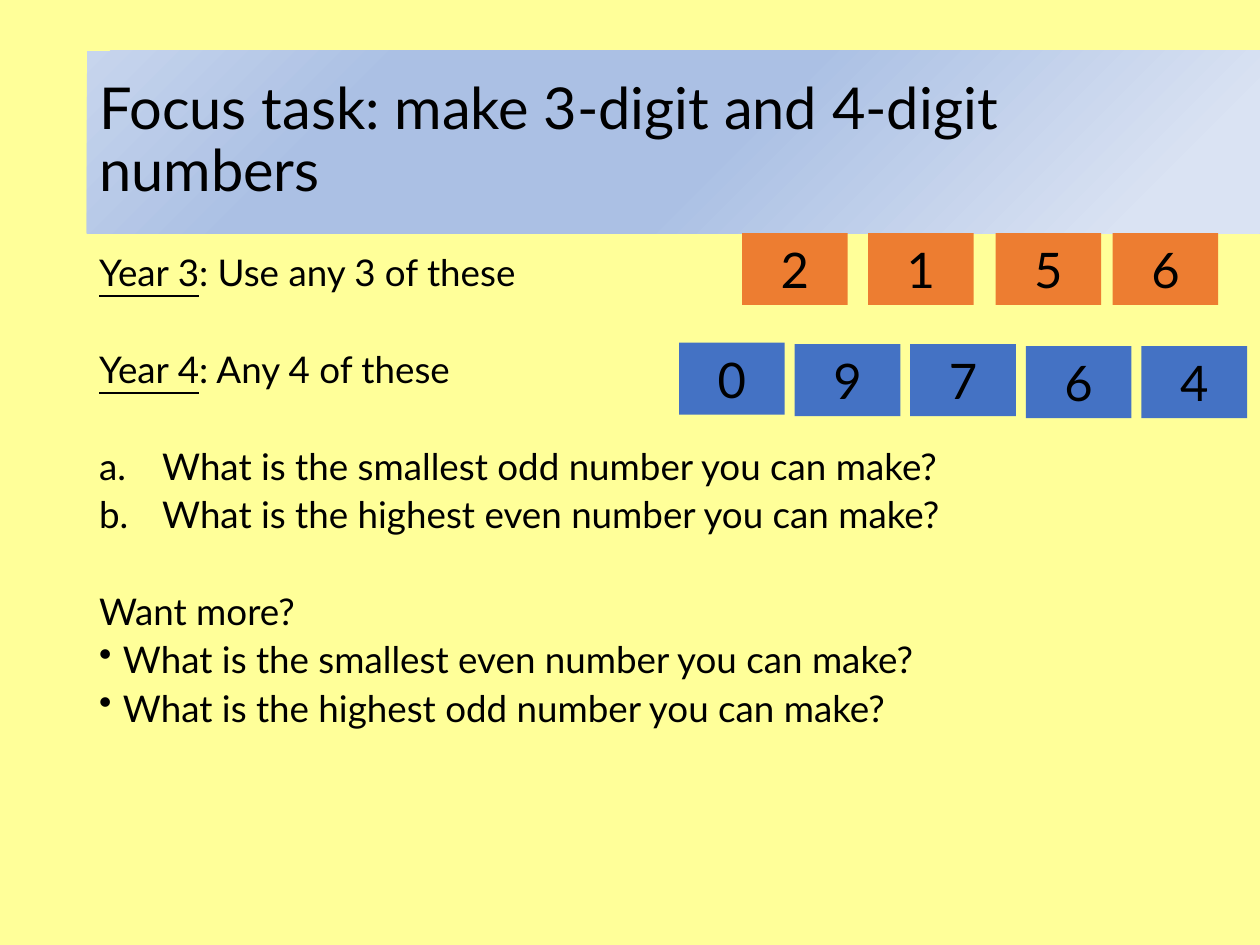
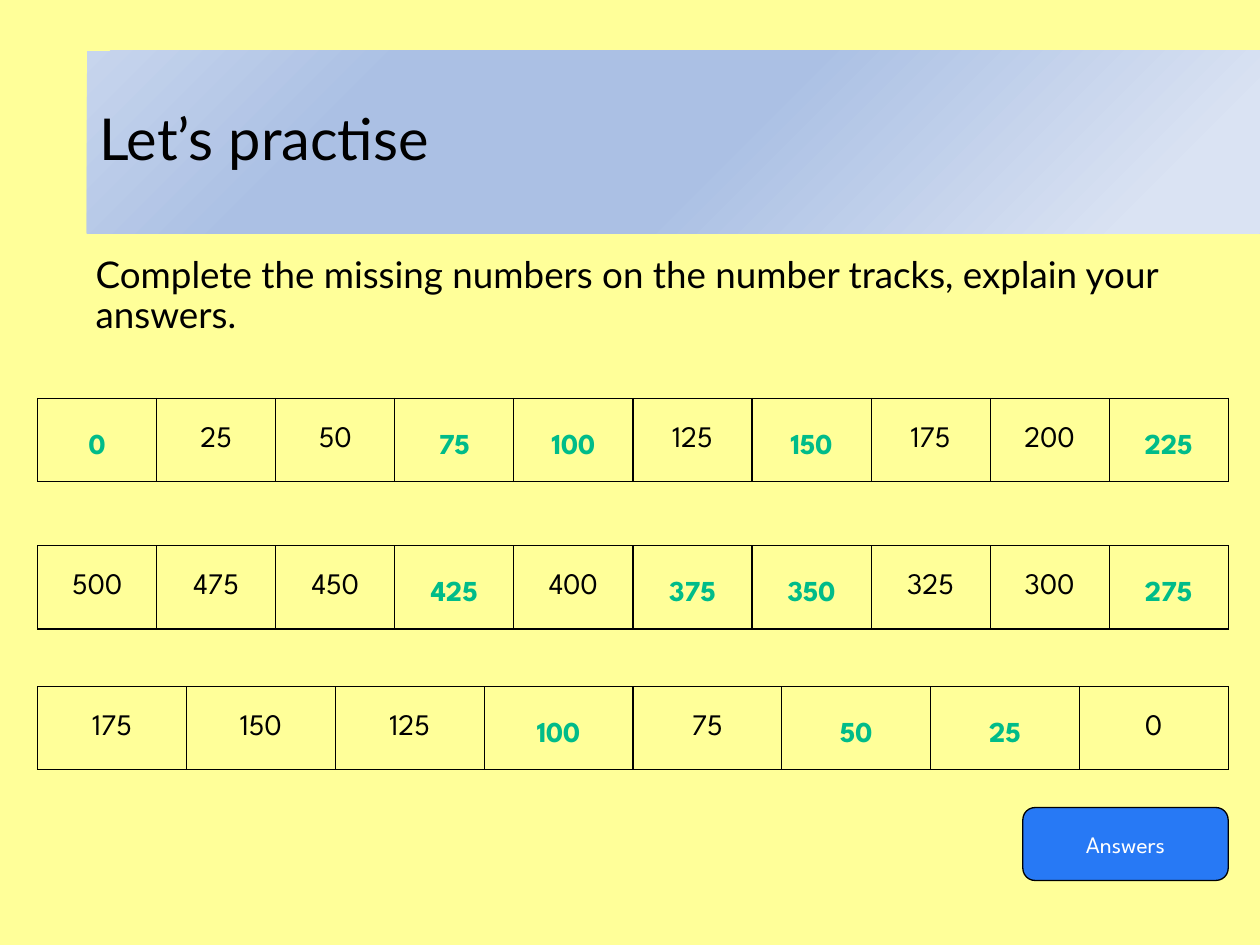
"""Build two maths lesson slides: digit tiles and number tracks."""
from dataclasses import dataclass
from typing import Any, NamedTuple

import lxml.etree
import pptx
import pptx.dml.color
import pptx.enum.shapes
import pptx.enum.text
import pptx.oxml
import pptx.oxml.ns
import pptx.util

Cm = pptx.util.Cm
Pt = pptx.util.Pt
RGBColor = pptx.dml.color.RGBColor
PRESET = pptx.enum.shapes.MSO_SHAPE
ALIGN = pptx.enum.text.PP_ALIGN
ANCHOR = pptx.enum.text.MSO_ANCHOR
AUTO_SIZE = pptx.enum.text.MSO_AUTO_SIZE

PAPER = RGBColor(0xFF, 0xFF, 0x99)
BLACK = RGBColor(0x00, 0x00, 0x00)
WHITE = RGBColor(0xFF, 0xFF, 0xFF)
ORANGE = RGBColor(0xED, 0x7D, 0x31)
BLUE = RGBColor(0x44, 0x72, 0xC4)
BUTTON_BLUE = RGBColor(0x27, 0x79, 0xF5)
ANSWER_GREEN = RGBColor(0x00, 0xBC, 0x89)
BAND_PALE = RGBColor(0xDA, 0xE3, 0xF3)
BAND_MID = RGBColor(0xAB, 0xC0, 0xE4)
BAND_LIGHT = RGBColor(0xC7, 0xD5, 0xED)
BAND_STOPS = ((10, BAND_PALE), (46, BAND_MID), (76, BAND_MID), (100, BAND_LIGHT))

LATO = "Lato"
SPARTAN = "League Spartan"
TITLE_FONT = {"name": LATO, "size": Pt(33)}
BODY_FONT = {"name": LATO, "size": Pt(21)}
TILE_FONT = {"name": LATO, "size": Pt(28)}
TRACK_FONT = {"name": SPARTAN, "size": Pt(17)}
ANSWER_FONT = {"name": SPARTAN, "size": Pt(16.5), "bold": True}
BUTTON_FONT = {"name": SPARTAN, "size": Pt(13.5)}
TRACK_MARGINS = {f"margin_{side}": Cm(0.18) for side in ("left", "right", "top", "bottom")}

LEFT, BAND_TOP, BAND_HEIGHT, TEXT_WIDTH = 1.75, 1.02, 3.68, 21.9
SLIDE_WIDTH, SLIDE_HEIGHT = 25.4, 19.05
BODY_TOP = 5.08
TRACK_LEFT, TRACK_WIDTH, TRACK_HEIGHT = 0.76, 24.0, 1.68
LINE_GAP, SECTION_GAP = 7.5, 35.2


class Box(NamedTuple):
    """A place on the slide in centimetres."""
    left: float
    top: float
    width: float
    height: float

    def lengths(self) -> list:
        """Give the four lengths for python-pptx."""
        return [Cm(value) for value in self]


class Marker(NamedTuple):
    """A bullet or a letter with its hanging indent."""
    tag: str
    attribute: str
    value: str
    indent: float


LETTER = Marker("a:buAutoNum", "type", "alphaLcPeriod", 1.27)
DOT = Marker("a:buChar", "char", "•", 0.48)


@dataclass
class TaskLine:
    """A line of the task text, with an underlined start."""
    text: str
    underlined: str = ""
    before: float = LINE_GAP
    marker: Marker | None = None


@dataclass
class Tile:
    """A coloured digit card."""
    digit: str
    left: float
    top: float
    colour: RGBColor


@dataclass
class NumberTrack:
    """A row of numbers, some of which are answers."""
    top: float
    numbers: tuple
    answers: set


TASK_LINES = [
    TaskLine(": Use any 3 of these", "Year 3"),
    TaskLine(": Any 4 of these", "Year 4", SECTION_GAP),
    TaskLine("What is the smallest odd number you can make?", "", SECTION_GAP, LETTER),
    TaskLine("What is the highest even number you can make?", marker=LETTER),
    TaskLine("Want more?", before=SECTION_GAP),
    TaskLine("What is the smallest even number you can make?", marker=DOT),
    TaskLine("What is the highest odd number you can make?", marker=DOT),
]
YEAR_3_TILES = [Tile(digit, left, 4.7, ORANGE)
                for digit, left in zip("2156", (14.96, 17.5, 20.07, 22.43))]
YEAR_4_TILES = [Tile(digit, 13.69 + 2.33 * place, top, BLUE)
                for place, (digit, top) in enumerate(zip("09764", (6.91, 6.94, 6.94, 6.98, 6.98)))]
TRACKS = [
    NumberTrack(8.03, tuple(range(0, 250, 25)), {0, 75, 100, 150, 225}),
    NumberTrack(11.0, tuple(range(500, 250, -25)), {425, 375, 350, 275}),
    NumberTrack(13.84, tuple(range(175, -25, -25)), {100, 50, 25}),
]


def apply(target: Any, formats: dict) -> None:
    """Set every format value on the target."""
    for name, value in formats.items():
        setattr(target, name, value)


def add_run(paragraph: Any, text: str, font: dict, colour: RGBColor = BLACK) -> Any:
    """Add formatted text to a paragraph."""
    run = paragraph.add_run()
    run.text = text
    apply(run.font, font)
    run.font.color.rgb = colour
    return run


def add_card(slide: Any, preset: Any, box: Box, fill: RGBColor) -> Any:
    """Add a flat shape without a line."""
    card = slide.shapes.add_shape(preset, *box.lengths())
    card.shadow.inherit = False
    card.fill.solid()
    card.fill.fore_color.rgb = fill
    card.line.fill.background()
    return card


def add_label(card: Any, text: str, font: dict, colour: RGBColor) -> None:
    """Centre a label on a shape."""
    card.text_frame.vertical_anchor = ANCHOR.MIDDLE
    paragraph = card.text_frame.paragraphs[0]
    paragraph.alignment = ALIGN.CENTER
    add_run(paragraph, text, font, colour)


def add_text_frame(slide: Any, box: Box, formats: dict) -> Any:
    """Add a wrapping text box and return its frame."""
    frame = slide.shapes.add_textbox(*box.lengths()).text_frame
    apply(frame, {"word_wrap": True, **formats})
    return frame


def add_band(slide: Any) -> None:
    """Draw the gradient title band behind everything else."""
    band = add_card(slide, PRESET.RECTANGLE,
                    Box(LEFT, BAND_TOP, SLIDE_WIDTH - LEFT, BAND_HEIGHT), BAND_MID)
    stops = "".join(f'<a:gs pos="{place * 1000}"><a:srgbClr val="{colour}"/></a:gs>'
                    for place, colour in BAND_STOPS)
    gradient = pptx.oxml.parse_xml(
        f'<a:gradFill {pptx.oxml.ns.nsdecls("a")} rotWithShape="1"><a:gsLst>{stops}</a:gsLst>'
        '<a:path path="circle"><a:fillToRect l="100000" t="100000"/></a:path></a:gradFill>')
    properties = band._element.spPr
    properties.replace(properties.find(pptx.oxml.ns.qn("a:solidFill")), gradient)
    slide.shapes._spTree.insert(2, band._element)


def add_titled_slide(deck: Any, text: str) -> Any:
    """Add a slide with the shared band and title style."""
    slide = deck.slides.add_slide(deck.slide_layouts[5])
    add_band(slide)
    title = slide.shapes.title
    apply(title, dict(zip(("left", "top", "width", "height"),
                          Box(LEFT, BAND_TOP, TEXT_WIDTH, BAND_HEIGHT).lengths())))
    apply(title.text_frame, {"vertical_anchor": ANCHOR.MIDDLE, "word_wrap": True,
                             "auto_size": AUTO_SIZE.NONE})
    paragraph = title.text_frame.paragraphs[0]
    apply(paragraph, {"alignment": ALIGN.LEFT, "line_spacing": 0.9})
    add_run(paragraph, text, TITLE_FONT)
    return slide


def add_marker(paragraph: Any, marker: Marker) -> None:
    """Give a paragraph its bullet or letter."""
    properties = paragraph._p.get_or_add_pPr()
    properties.set("marL", str(Cm(marker.indent)))
    properties.set("indent", str(-Cm(marker.indent)))
    bullet = lxml.etree.SubElement(properties, pptx.oxml.ns.qn(marker.tag))
    bullet.set(marker.attribute, marker.value)


def add_task(slide: Any, lines: list[TaskLine]) -> None:
    """Write the task text."""
    frame = add_text_frame(slide, Box(LEFT, BODY_TOP, TEXT_WIDTH, 13.59), {})
    for place, line in enumerate(lines):
        paragraph = frame.add_paragraph() if place else frame.paragraphs[0]
        apply(paragraph, {"line_spacing": 0.8, "space_before": Pt(line.before)})
        if line.marker:
            add_marker(paragraph, line.marker)
        if line.underlined:
            add_run(paragraph, line.underlined, {**BODY_FONT, "underline": True})
        add_run(paragraph, line.text, BODY_FONT)


def add_tile(slide: Any, tile: Tile) -> None:
    """Draw a digit card."""
    card = add_card(slide, PRESET.RECTANGLE, Box(tile.left, tile.top, 2.13, 1.45), tile.colour)
    add_label(card, tile.digit, TILE_FONT, BLACK)


def add_cell_borders(cell: Any) -> None:
    """Draw thin black lines round a table cell."""
    properties = cell._tc.get_or_add_tcPr()
    for place, side in enumerate(("lnL", "lnR", "lnT", "lnB")):
        properties.insert(place, pptx.oxml.parse_xml(
            f'<a:{side} {pptx.oxml.ns.nsdecls("a")} w="{Pt(0.75)}">'
            f'<a:solidFill><a:srgbClr val="{BLACK}"/></a:solidFill></a:{side}>'))


def add_track(slide: Any, track: NumberTrack) -> None:
    """Draw a number track and lay the answers over its empty cells."""
    count = len(track.numbers)
    cell_width = TRACK_WIDTH / count
    table = slide.shapes.add_table(
        1, count, *Box(TRACK_LEFT, track.top, TRACK_WIDTH, TRACK_HEIGHT).lengths()).table
    apply(table, {"first_row": False, "horz_banding": False})
    for place, number in enumerate(track.numbers):
        table.columns[place].width = Cm(cell_width)
        cell = table.cell(0, place)
        apply(cell, {**TRACK_MARGINS, "vertical_anchor": ANCHOR.MIDDLE})
        cell.fill.background()
        add_cell_borders(cell)
        paragraph, font, colour = cell.text_frame.paragraphs[0], TRACK_FONT, BLACK
        if number in track.answers:
            box = Box(TRACK_LEFT + place * cell_width, track.top, cell_width, TRACK_HEIGHT)
            frame = add_text_frame(slide, box, {**TRACK_MARGINS, "vertical_anchor": ANCHOR.MIDDLE})
            paragraph, font, colour = frame.paragraphs[0], ANSWER_FONT, ANSWER_GREEN
            paragraph.line_spacing = 1.15
        paragraph.alignment = ALIGN.CENTER
        add_run(paragraph, str(number), font, colour)


def add_answers_button(slide: Any) -> None:
    """Draw the answers button."""
    button = add_card(slide, PRESET.ROUNDED_RECTANGLE, Box(20.62, 16.28, 4.14, 1.47), BUTTON_BLUE)
    button.line.color.rgb = BLACK
    button.line.width = Pt(0.75)
    add_label(button, "Answers", BUTTON_FONT, WHITE)


def build_focus_task(deck: Any) -> None:
    """Build the digit tile slide."""
    slide = add_titled_slide(deck, "Focus task: make 3-digit and 4-digit numbers")
    add_task(slide, TASK_LINES)
    for tile in YEAR_3_TILES + YEAR_4_TILES:
        add_tile(slide, tile)


def build_practice(deck: Any) -> None:
    """Build the number track slide."""
    slide = add_titled_slide(deck, "Let’s practise")
    margins = {"margin_left": Cm(0.18), "margin_right": Cm(0.18),
               "margin_top": Cm(0.1), "margin_bottom": Cm(0.1)}
    frame = add_text_frame(slide, Box(LEFT, BODY_TOP, TEXT_WIDTH, 12.09), margins)
    instruction = frame.paragraphs[0]
    apply(instruction, {"line_spacing": 0.9, "space_before": Pt(LINE_GAP)})
    add_run(instruction, "Complete the missing numbers on the number tracks, "
                         "explain your answers.", BODY_FONT)
    for track in TRACKS:
        add_track(slide, track)
    add_answers_button(slide)


def main() -> None:
    """Build and save the deck."""
    deck = pptx.Presentation()
    apply(deck, {"slide_width": Cm(SLIDE_WIDTH), "slide_height": Cm(SLIDE_HEIGHT)})
    background = deck.slide_master.background.fill
    background.solid()
    background.fore_color.rgb = PAPER
    build_focus_task(deck)
    build_practice(deck)
    deck.save("out.pptx")


if __name__ == "__main__":
    main()
